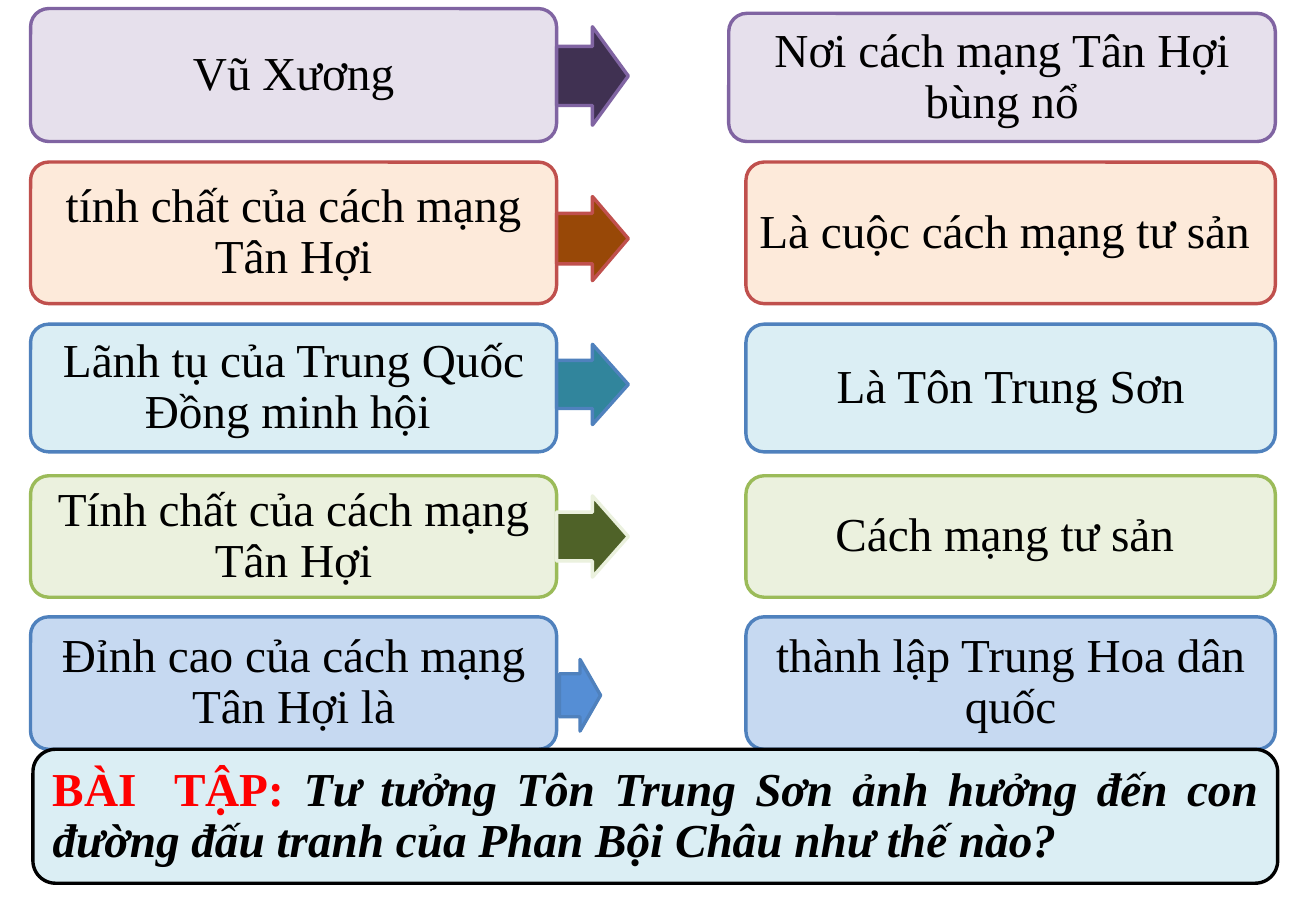
from dataclasses import dataclass

from pptx import Presentation
from pptx.dml.color import RGBColor
from pptx.enum.shapes import MSO_SHAPE
from pptx.enum.text import MSO_ANCHOR, PP_ALIGN
from pptx.util import Cm, Pt

ROUNDED = MSO_SHAPE.ROUNDED_RECTANGLE
ARROW = MSO_SHAPE.RIGHT_ARROW
MIDDLE = MSO_ANCHOR.MIDDLE
CENTER = PP_ALIGN.CENTER
JUSTIFY = PP_ALIGN.JUSTIFY
FONT = "Times New Roman"
CORNER_INSET = 0.29


@dataclass
class Box:
    left: float
    top: float
    width: float
    height: float


@dataclass
class Pair:
    question: str
    answer: str
    top: float
    height: float
    fill: str
    line: str
    arrow_fill: str
    arrow_line: str
    arrow_drop: float
    arrow_height: float
    arrow_gap: float = 0
    arrow_width: float = 1.5
    answer_left: float = 15.6
    answer_drop: float = 0


PAIRS = [
    Pair("Vũ Xương", "Nơi cách mạng Tân Hợi bùng nổ", 0.18, 2.78,
         "E6E0EC", "8064A2", "403152", "8064A2", 0.38, 2.06,
         answer_left=15.24, answer_drop=0.1),
    Pair("tính chất của cách mạng Tân Hợi", "Là cuộc cách mạng tư sản ", 3.39, 2.96,
         "FDEADA", "C0504D", "984807", "C0504D", 0.72, 1.76),
    Pair("Lãnh tụ của Trung Quốc Đồng minh hội ", "Là Tôn Trung Sơn", 6.78, 2.67,
         "DBEEF4", "4F81BD", "31859C", "4F81BD", 0.42, 1.68),
    Pair("Tính chất của cách mạng Tân Hợi", "Cách mạng tư sản ", 9.95, 2.54,
         "EBF1DE", "9BBB59", "4F6228", "EBF1DE", 0.42, 1.7),
    Pair("Đỉnh cao của cách mạng Tân Hợi là", "thành lập Trung Hoa dân quốc", 12.9, 2.77,
         "C6D9F1", "4F81BD", "558ED5", "4F81BD", 0.89, 1.5,
         arrow_gap=0.06, arrow_width=0.86),
]


def color(value):
    return RGBColor.from_string(value)


def add_block(page, kind, box, fill, line):
    block = page.shapes.add_shape(
        kind, Cm(box.left), Cm(box.top), Cm(box.width), Cm(box.height))
    block.shadow.inherit = False
    block.fill.solid()
    block.fill.fore_color.rgb = color(fill)
    block.line.color.rgb = color(line)
    block.line.width = Pt(2)
    return block


def add_card(page, box, fill, line, radius, inset, align):
    card = add_block(page, ROUNDED, box, fill, line)
    card.adjustments[0] = radius / box.height
    frame = card.text_frame
    frame.word_wrap = True
    frame.vertical_anchor = MIDDLE
    margin = Cm(max(0, inset - CORNER_INSET * radius))
    frame.margin_left = frame.margin_right = margin
    frame.margin_top = frame.margin_bottom = margin
    para = frame.paragraphs[0]
    para.alignment = align
    para.line_spacing = 0.9
    return para


def add_span(para, text, fill="000000", bold=False, italic=False):
    span = para.add_run()
    span.text = text
    span.font.name = FONT
    span.font.size = Pt(28)
    span.font.bold = bold
    span.font.italic = italic
    span.font.color.rgb = color(fill)


def add_arrow(page, box, fill, line):
    arrow = add_block(page, ARROW, box, fill, line)
    arrow.adjustments[0] = 0.6
    arrow.adjustments[1] = box.width / 2 / min(box.width, box.height)


def add_pair(page, box, pair):
    question = Box(box.left, box.top, 11, box.height)
    answer = Box(pair.answer_left, box.top + pair.answer_drop,
                 box.left + box.width - pair.answer_left, box.height - pair.answer_drop)
    arrow = Box(question.left + question.width + pair.arrow_gap,
                box.top + pair.arrow_drop, pair.arrow_width, pair.arrow_height)
    for card, text in ((question, pair.question), (answer, pair.answer)):
        para = add_card(page, card, pair.fill, pair.line, 0.38, 0.21, CENTER)
        add_span(para, text)
    add_arrow(page, arrow, pair.arrow_fill, pair.arrow_line)


def add_exercise(page, box):
    para = add_card(page, box, "DBEEF4", "000000", 0.47, 0.41, JUSTIFY)
    add_span(para, "BÀI  TẬP: ", "FF0000", bold=True)
    add_span(para, "Tư tưởng Tôn Trung Sơn ảnh hưởng đến con đường đấu tranh "
                   "của Phan Bội Châu như thế nào?", bold=True, italic=True)


def main():
    deck = Presentation()
    deck.slide_width = Cm(27.52)
    deck.slide_height = Cm(19.05)
    page = deck.slides.add_slide(deck.slide_layouts[6])
    for pair in PAIRS:
        add_pair(page, Box(0.64, pair.top, 26.03, pair.height), pair)
    add_exercise(page, Box(0.69, 15.67, 26.03, 2.8))
    deck.save("out.pptx")


if __name__ == "__main__":
    main()
